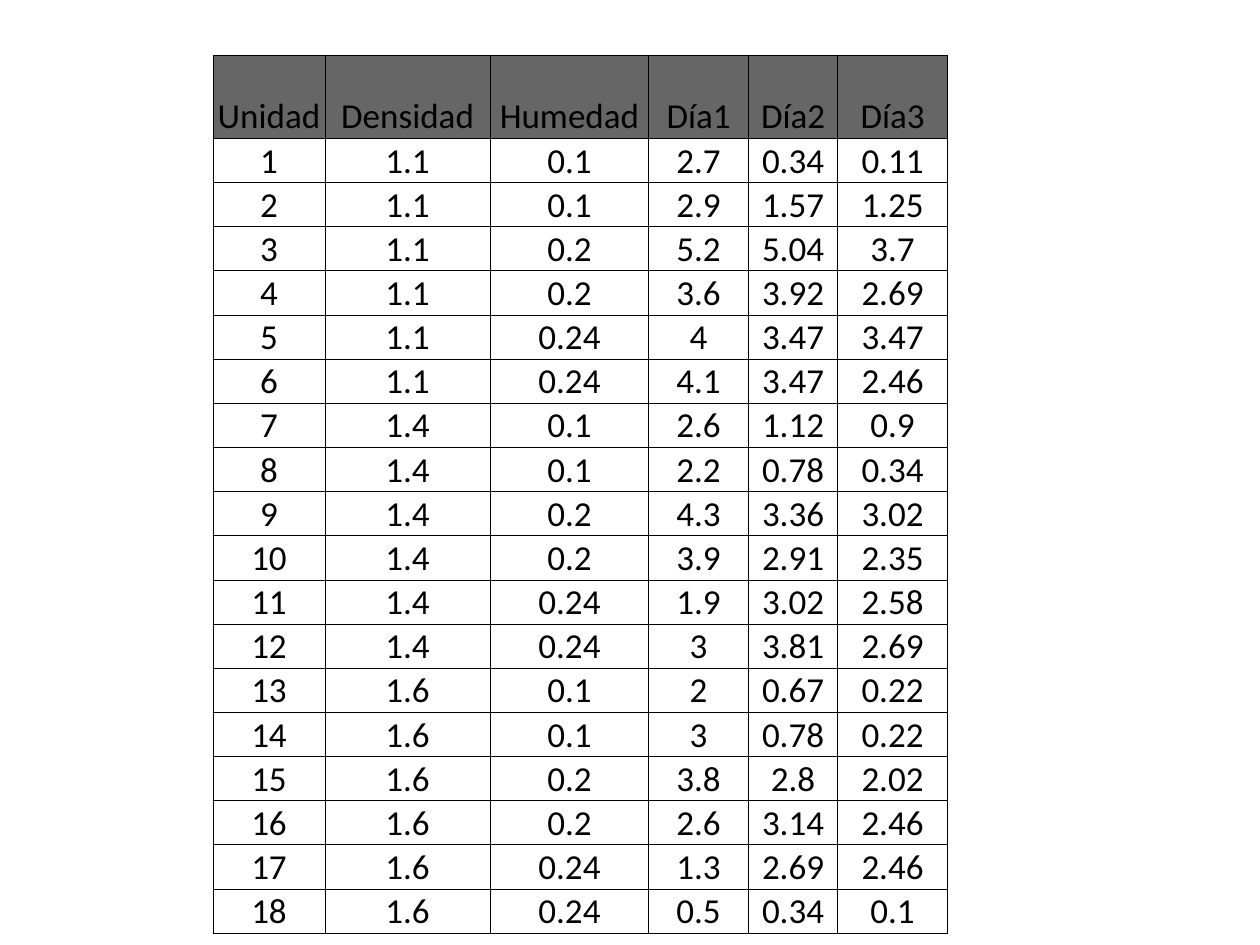
from dataclasses import dataclass
from itertools import product

from lxml.etree import SubElement
from pptx import Presentation
from pptx.dml.color import RGBColor as Rgb
from pptx.enum.text import MSO_VERTICAL_ANCHOR as Anchor, PP_PARAGRAPH_ALIGNMENT as Align
from pptx.oxml.ns import qn
from pptx.util import Inches, Pt


@dataclass(frozen=True)
class Theme:
    """Colours, type and line sizes of the deck."""
    ink: str = "000000"
    header: str = "666666"
    paper: str = "FFFFFF"
    font: str = "Calibri"
    text_size: float = 20
    rule_width: float = 0.5
    inset: float = 0.01


@dataclass(frozen=True)
class Box:
    """A region given as shares of the slide's size."""
    left: float
    top: float
    width: float
    height: float


THEME = Theme()
SLIDE_WIDTH, SLIDE_HEIGHT = Inches(10), Inches(7.5)
TABLE_BOX = Box(0.169, 0.0585, 0.583, 0.912)
COLUMN_PARTS = (0.89, 1.31, 1.26, 0.79, 0.71, 0.87)
HEADER_ROWS = 2
ROW_SHARE = 0.044
HEADINGS = ("Unidad", "Densidad", "Humedad", "Día1", "Día2", "Día3")
DENSITIES = ("1.1", "1.4", "1.6")
MOISTURES = ("0.1", "0.2", "0.24")
REPLICATES = 2
DAYS = (
    ("2.7", "0.34", "0.11"), ("2.9", "1.57", "1.25"), ("5.2", "5.04", "3.7"),
    ("3.6", "3.92", "2.69"), ("4", "3.47", "3.47"), ("4.1", "3.47", "2.46"),
    ("2.6", "1.12", "0.9"), ("2.2", "0.78", "0.34"), ("4.3", "3.36", "3.02"),
    ("3.9", "2.91", "2.35"), ("1.9", "3.02", "2.58"), ("3", "3.81", "2.69"),
    ("2", "0.67", "0.22"), ("3", "0.78", "0.22"), ("3.8", "2.8", "2.02"),
    ("2.6", "3.14", "2.46"), ("1.3", "2.69", "2.46"), ("0.5", "0.34", "0.1"),
)


def experiment_rows():
    """Return the headings and one row for each unit of the factorial design."""
    design = product(DENSITIES, MOISTURES, range(REPLICATES))
    units = enumerate(zip(design, DAYS), start=1)
    return [HEADINGS] + [
        (str(unit), density, moisture, *days)
        for unit, ((density, moisture, _), days) in units
    ]


def write_text(frame, text, *, size=THEME.text_size, color=THEME.ink, align=Align.CENTER):
    """Write one formatted paragraph into a text frame."""
    para = frame.paragraphs[0]
    para.alignment = align
    span = para.add_run()
    span.text = text
    span.font.name = THEME.font
    span.font.size = Pt(size)
    span.font.color.rgb = Rgb.from_string(color)


def rule_cell(cell):
    """Draw the four borders of a cell, ahead of its fill."""
    properties = cell._tc.get_or_add_tcPr()
    for side in ("lnL", "lnR", "lnT", "lnB"):
        line = SubElement(properties, qn(f"a:{side}"), w=str(Pt(THEME.rule_width)))
        SubElement(SubElement(line, qn("a:solidFill")), qn("a:srgbClr"), val=THEME.ink)


def style_cell(cell, text, fill):
    """Set the text, margins, borders and fill of a cell."""
    cell.margin_left = cell.margin_right = cell.margin_top = Inches(THEME.inset)
    cell.margin_bottom = 0
    cell.vertical_anchor = Anchor.BOTTOM
    write_text(cell.text_frame, text)
    rule_cell(cell)
    if fill:
        cell.fill.solid()
        cell.fill.fore_color.rgb = Rgb.from_string(fill)
    else:
        cell.fill.background()


def cell_fill(row, column):
    """Pick the header, factor or unfilled look of a cell."""
    if row == 0:
        return THEME.header
    return THEME.paper if column < HEADINGS.index("Día1") else None


def add_experiment_table(page, box, rows):
    """Place the table of units, factors and daily readings in the box."""
    width, height = int(SLIDE_WIDTH * box.width), int(SLIDE_HEIGHT * box.height)
    frame = page.shapes.add_table(
        len(rows), len(HEADINGS), int(SLIDE_WIDTH * box.left),
        int(SLIDE_HEIGHT * box.top), width, height)
    table = frame.table
    table.first_row = table.horz_banding = False
    for column, part in zip(table.columns, COLUMN_PARTS):
        column.width = int(width * part / sum(COLUMN_PARTS))
    for index, (row, values) in enumerate(zip(table.rows, rows)):
        row.height = int(SLIDE_HEIGHT * ROW_SHARE * (1 if index else HEADER_ROWS))
        for position, (cell, text) in enumerate(zip(row.cells, values)):
            style_cell(cell, text, cell_fill(index, position))
    frame.height = height


def main():
    """Build and save the deck."""
    deck = Presentation()
    deck.slide_width, deck.slide_height = SLIDE_WIDTH, SLIDE_HEIGHT
    page = deck.slides.add_slide(deck.slide_layouts[6])
    add_experiment_table(page, TABLE_BOX, experiment_rows())
    deck.save("out.pptx")


if __name__ == "__main__":
    main()
